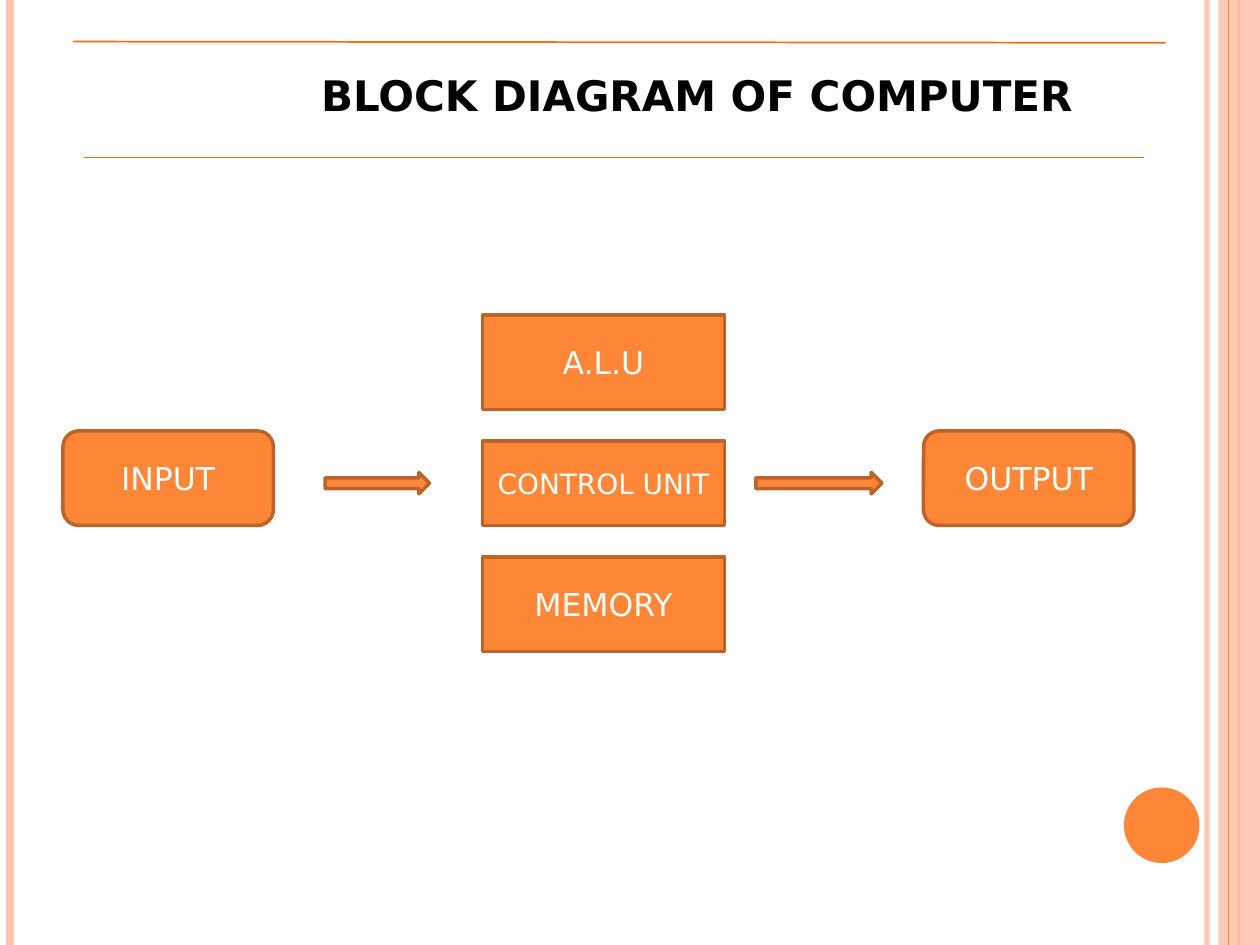
from dataclasses import dataclass

import pptx
import pptx.dml.color
import pptx.enum.shapes
import pptx.enum.text
import pptx.oxml.ns
import pptx.util
from lxml import etree

Inches = pptx.util.Inches
Pt = pptx.util.Pt
Kind = pptx.enum.shapes.MSO_SHAPE
Anchor = pptx.enum.text.MSO_ANCHOR
Align = pptx.enum.text.PP_ALIGN
qn = pptx.oxml.ns.qn


@dataclass(frozen=True)
class Theme:
    font: str = "DejaVu Sans"
    accent: str = "FE8637"
    border: str = "BC6329"
    pale: str = "FEC3AE"
    rule: str = "FF6B0A"
    light: str = "FFFFFF"
    dark: str = "000000"
    title_size: float = 24
    label_size: float = 18
    small_size: float = 16
    border_width: float = 2


@dataclass(frozen=True)
class Rule:
    x1: float
    y1: float
    x2: float
    y2: float
    color: str
    width: float
    opacity: int = 100


@dataclass(frozen=True)
class Block:
    kind: Kind
    left: float
    top: float
    width: float
    height: float
    label: str = ""
    size: float = 18


THEME = Theme()
PAGE_WIDTH, PAGE_HEIGHT = 10, 7.5


def rgb(value: str) -> pptx.dml.color.RGBColor:
    return pptx.dml.color.RGBColor.from_string(value)


def set_opacity(shape, percent: int) -> None:
    color = next(shape._element.spPr.iter(qn("a:srgbClr")))
    etree.SubElement(color, qn("a:alpha"), val=str(percent * 1000))


def add_rule(page, rule: Rule) -> None:
    ends = (Inches(v) for v in (rule.x1, rule.y1, rule.x2, rule.y2))
    line = page.shapes.add_connector(pptx.enum.shapes.MSO_CONNECTOR.STRAIGHT, *ends)
    line.line.color.rgb = rgb(rule.color)
    line.line.width = Pt(rule.width)
    if rule.opacity < 100:
        set_opacity(line, rule.opacity)
    etree.SubElement(line._element.spPr, qn("a:effectLst"))


def add_edge(page, x: float, color: str, width: float, opacity: int = 100) -> None:
    add_rule(page, Rule(x, 0, x, PAGE_HEIGHT, color, width, opacity))


def add_plain(page, block: Block, fill: str):
    place = (Inches(v) for v in (block.left, block.top, block.width, block.height))
    shape = page.shapes.add_shape(block.kind, *place)
    shape.shadow.inherit = False
    shape.fill.solid()
    shape.fill.fore_color.rgb = rgb(fill)
    shape.line.fill.background()
    return shape


def write(para, text: str, color: str, size: float, bold: bool = False) -> None:
    span = para.add_run()
    span.text = text
    values = {"name": THEME.font, "size": Pt(size), "bold": bold}
    for name, value in values.items():
        setattr(span.font, name, value)
    span.font.color.rgb = rgb(color)


def add_block(page, block: Block) -> None:
    shape = add_plain(page, block, THEME.accent)
    shape.line.color.rgb = rgb(THEME.border)
    shape.line.width = Pt(THEME.border_width)
    if block.label:
        frame = shape.text_frame
        frame.vertical_anchor = Anchor.MIDDLE
        frame.word_wrap = True
        para = frame.paragraphs[0]
        para.alignment = Align.CENTER
        write(para, block.label, THEME.light, block.size)


def add_title(page, text: str) -> None:
    box = page.shapes.add_textbox(Inches(0.83), Inches(0.5), Inches(8.08), Inches(0.5))
    frame = box.text_frame
    frame.word_wrap = True
    para = frame.paragraphs[0]
    para._p.get_or_add_pPr().set("marL", str(Inches(1.62)))
    write(para, text, THEME.dark, THEME.title_size, bold=True)


def main() -> None:
    deck = pptx.Presentation()
    deck.slide_width, deck.slide_height = Inches(PAGE_WIDTH), Inches(PAGE_HEIGHT)
    page = deck.slides.add_slide(deck.slide_layouts[6])

    # Side decoration
    add_edge(page, 9.58, THEME.pale, 3, opacity=93)
    add_edge(page, 0.08, THEME.pale, 4.5)
    add_edge(page, 9.83, THEME.accent, 1.5)
    band = add_plain(page, Block(Kind.RECTANGLE, 9.67, 0, 0.33, PAGE_HEIGHT), THEME.pale)
    set_opacity(band, 87)
    add_edge(page, 9.75, THEME.accent, 0.75)
    add_plain(page, Block(Kind.OVAL, 8.92, 6.25, 0.6, 0.6), THEME.accent)

    # Input and output
    for left, label in ((0.5, "INPUT"), (7.33, "OUTPUT")):
        add_block(page, Block(Kind.ROUNDED_RECTANGLE, left, 3.42, 1.67, 0.75,
                              label, THEME.label_size))

    # Processing units
    units = (
        (2.5, 0.75, "A.L.U", THEME.label_size),
        (3.5, 0.67, "CONTROL UNIT", THEME.small_size),
        (4.42, 0.75, "MEMORY", THEME.label_size),
    )
    for top, height, label, size in units:
        add_block(page, Block(Kind.RECTANGLE, 3.83, top, 1.92, height, label, size))

    # Flow arrows
    for left, width in ((2.58, 0.83), (6, 1)):
        add_block(page, Block(Kind.RIGHT_ARROW, left, 3.75, width, 0.17))

    # Title between two rules
    add_rule(page, Rule(0.58, 0.33, 9.25, 0.34, THEME.rule, 1))
    add_rule(page, Rule(0.67, 1.25, 9.08, 1.25, THEME.rule, 1))
    add_title(page, "BLOCK DIAGRAM OF COMPUTER")

    deck.save("out.pptx")


if __name__ == "__main__":
    main()
